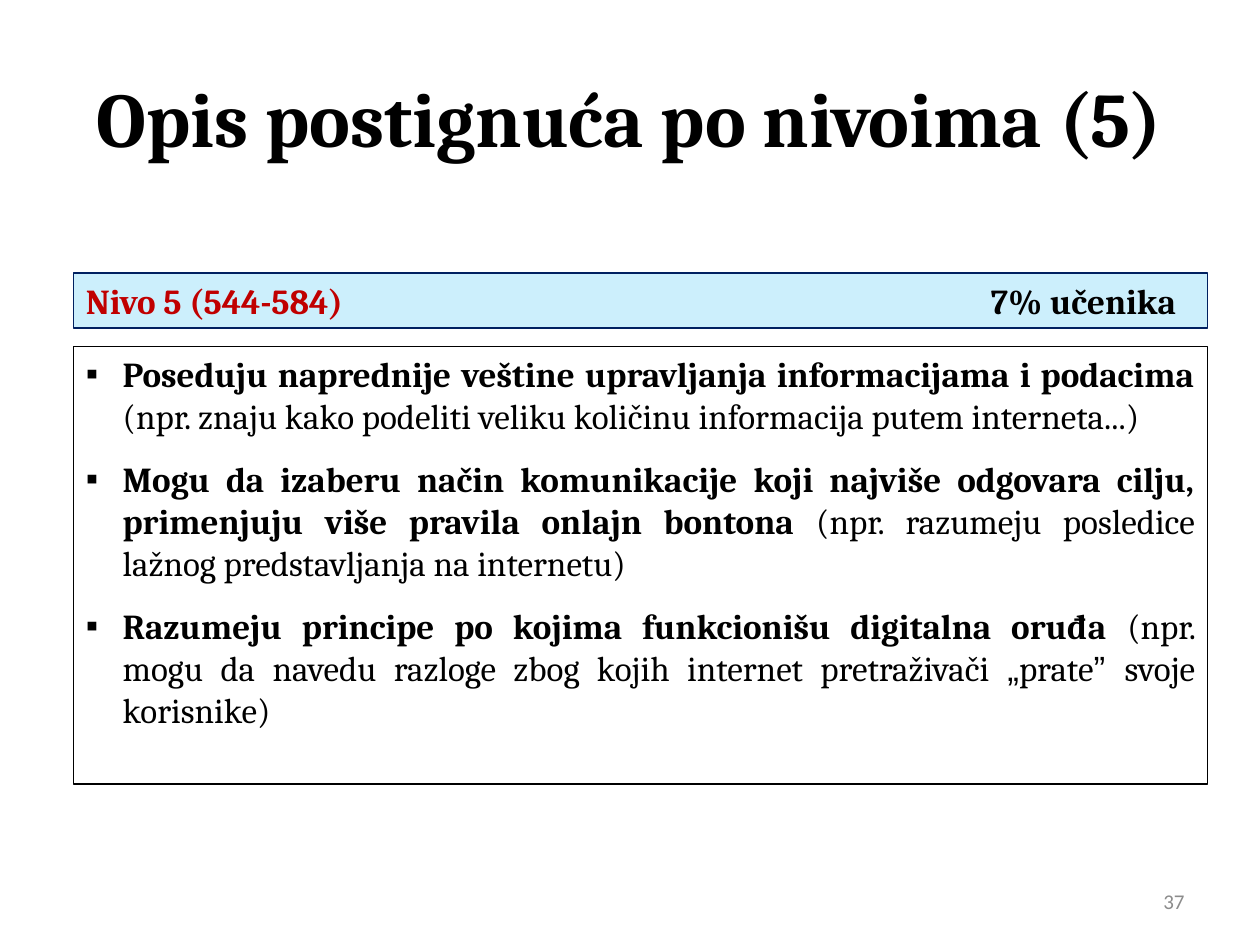
from lxml.etree import SubElement
from pptx import Presentation
from pptx.dml.color import RGBColor
from pptx.enum.shapes import MSO_SHAPE
from pptx.enum.text import MSO_ANCHOR, PP_ALIGN
from pptx.oxml.ns import qn
from pptx.util import Pt

BLACK = RGBColor(0x00, 0x00, 0x00)
GREY = RGBColor(0x8C, 0x8C, 0x8C)
RED = RGBColor(0xC0, 0x00, 0x00)
NAVY = RGBColor(0x00, 0x20, 0x60)
SKY = RGBColor(0x00, 0xB0, 0xF0)

BULLET_INDENT = 21
SHARE_TAB = 623  # right edge of the pupil share, from the text edge

# Each achievement: bold statement, then plain (text, font) parts
ACHIEVEMENTS = [
    ("Poseduju naprednije veštine upravljanja informacijama i podacima ",
     [("(npr. znaju kako podeliti veliku količinu informacija putem interneta...)", "Cambria")]),
    ("Mogu da izaberu način komunikacije koji najviše odgovara cilju, "
     "primenjuju više pravila onlajn bontona ",
     [("(npr. razumeju posledice lažnog predstavljanja na internetu)", "Cambria")]),
    ("Razumeju principe po kojima funkcionišu digitalna oruđa ",
     [("(npr. mogu da navedu razloge zbog kojih internet pretraživači ", "Cambria"),
      ("„", "Arial"), ("prate", "Cambria"), ("” ", "Arial"),
      ("svoje korisnike)", "Cambria")]),
]


def set_attributes(target, **values):
    for name, value in values.items():
        setattr(target, name, value)


def place(shape, box):
    lengths = (Pt(length) for length in box)
    set_attributes(shape, **dict(zip(("left", "top", "width", "height"), lengths)))


def add_run(paragraph, text, size=20, color=BLACK, name="Cambria", bold=False):
    run = paragraph.add_run()
    run.text = text
    set_attributes(run.font, size=Pt(size), name=name, bold=bold)
    run.font.color.rgb = color


def add_panel(slide, box, line_color):
    panel = slide.shapes.add_shape(MSO_SHAPE.RECTANGLE, *(Pt(length) for length in box))
    panel.shadow.inherit = False
    panel.fill.background()
    panel.line.color.rgb = line_color
    panel.line.width = Pt(0.75)
    set_attributes(panel.text_frame, word_wrap=True, vertical_anchor=MSO_ANCHOR.TOP)
    return panel


def add_title(slide, box):
    title = slide.shapes.title
    place(title, box)
    title.text_frame.vertical_anchor = MSO_ANCHOR.MIDDLE
    paragraph = title.text_frame.paragraphs[0]
    paragraph.alignment = PP_ALIGN.CENTER
    add_run(paragraph, "Opis postignuća po nivoima (5)", size=44, bold=True)


def add_level_bar(slide, box):
    bar = add_panel(slide, box, NAVY)
    bar.fill.solid()
    bar.fill.fore_color.rgb = SKY
    # 20 % opacity
    color = bar.fill._xPr.find(qn("a:solidFill"))[0]
    SubElement(color, qn("a:alpha"), val="20000")

    paragraph = bar.text_frame.paragraphs[0]
    paragraph.alignment = PP_ALIGN.LEFT
    tabs = SubElement(paragraph._p.get_or_add_pPr(), qn("a:tabLst"))
    SubElement(tabs, qn("a:tab"), pos=str(Pt(SHARE_TAB)), algn="r")
    add_run(paragraph, "Nivo 5 (544-584)\t", color=RED, bold=True)
    add_run(paragraph, "7% učenika", bold=True)


def add_achievements(slide, box):
    frame = add_panel(slide, box, BLACK).text_frame
    for index, (statement, example) in enumerate(ACHIEVEMENTS):
        paragraph = frame.add_paragraph() if index else frame.paragraphs[0]
        set_attributes(paragraph, alignment=PP_ALIGN.JUSTIFY,
                       space_before=Pt(6), space_after=Pt(6))
        # Square bullet with hanging indent
        properties = paragraph._p.get_or_add_pPr()
        properties.set("marL", str(Pt(BULLET_INDENT)))
        properties.set("indent", str(Pt(-BULLET_INDENT)))
        SubElement(properties, qn("a:buFont"), typeface="Arial")
        SubElement(properties, qn("a:buChar"), char="▪")
        add_run(paragraph, statement, bold=True)
        for text, name in example:
            add_run(paragraph, text, name=name)


def add_slide_number(slide, box):
    frame = slide.shapes.add_textbox(*(Pt(length) for length in box)).text_frame
    set_attributes(frame, word_wrap=True, vertical_anchor=MSO_ANCHOR.MIDDLE)
    paragraph = frame.paragraphs[0]
    paragraph.alignment = PP_ALIGN.RIGHT
    add_run(paragraph, "37", size=12, color=GREY, name="Calibri")


def main():
    presentation = Presentation()
    set_attributes(presentation, slide_width=Pt(720), slide_height=Pt(540))
    slide = presentation.slides.add_slide(presentation.slide_layouts[5])
    add_title(slide, (36, 21.6, 648, 90))
    add_slide_number(slide, (516, 500.5, 168, 28.8))
    add_level_bar(slide, (42, 156, 648, 31.5))
    add_achievements(slide, (42, 198, 648, 250))
    presentation.save("out.pptx")


if __name__ == "__main__":
    main()
